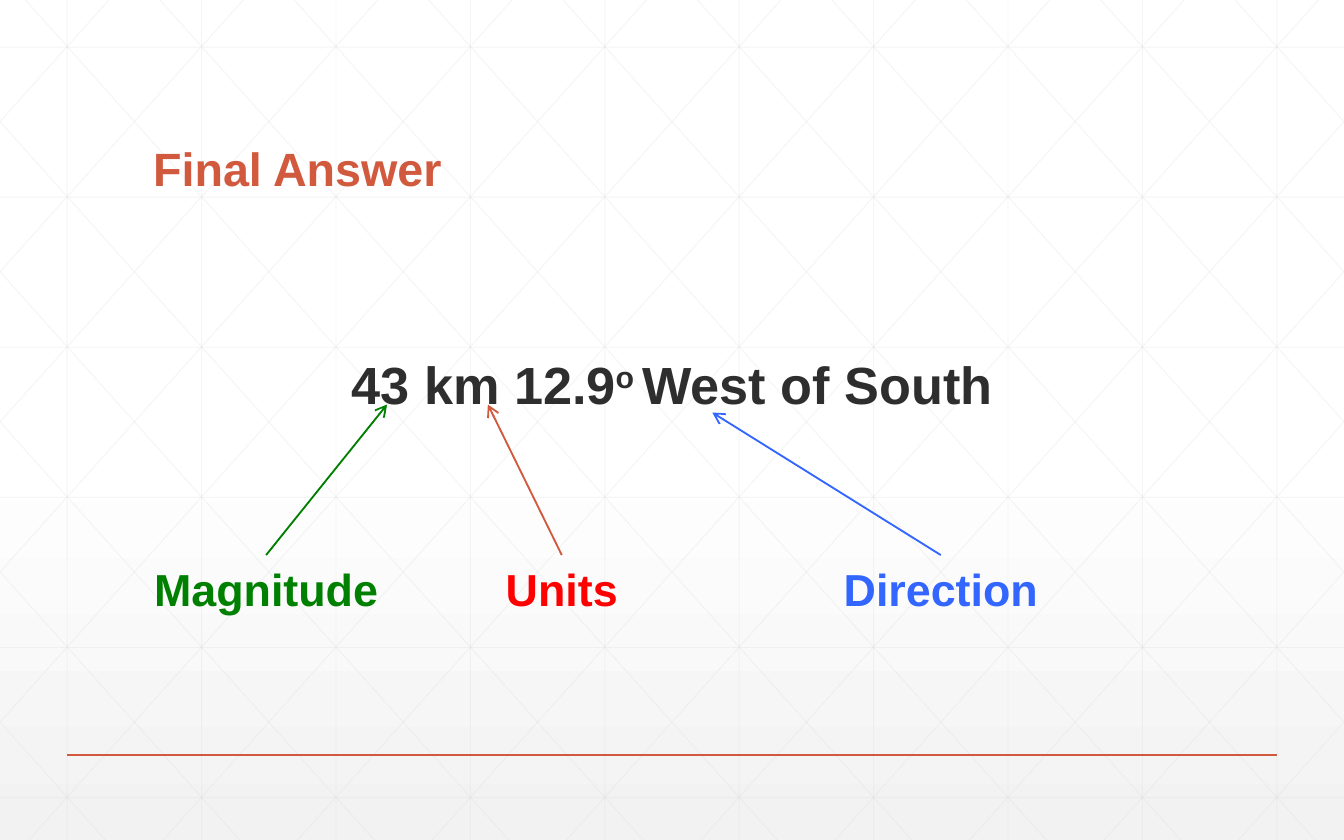
from copy import deepcopy

from lxml import etree
from pptx import Presentation
from pptx.dml.color import RGBColor
from pptx.enum.shapes import MSO_CONNECTOR
from pptx.enum.text import MSO_ANCHOR, PP_ALIGN
from pptx.oxml.ns import qn
from pptx.util import Inches, Pt

STRAIGHT = MSO_CONNECTOR.STRAIGHT
TOP, BOTTOM = MSO_ANCHOR.TOP, MSO_ANCHOR.BOTTOM
LEFT, CENTER = PP_ALIGN.LEFT, PP_ALIGN.CENTER

WIDTH, HEIGHT = 10, 6.25
FONT = "Arial"
RUST, DARK, GRID = "D15A3E", "2D2E2D", "D9D9D9"
GREEN, RED, BLUE = "008000", "FF0000", "3366FF"

# label, box, text colour, arrow colour, arrow tip
PARTS = [
    ("Magnitude", (0.93, 4.13, 2.1, 0.5), GREEN, GREEN, (2.88, 3.01)),
    ("Direction", (5.95, 4.13, 2.1, 0.5), BLUE, BLUE, (5.3, 3.07)),
    ("Units", (3.13, 4.13, 2.1, 0.5), RED, RUST, (3.63, 3.01)),
]


def rgb(code):
    return RGBColor.from_string(code)


def add_line(shapes, start, end, color, width=1, opacity=None, arrow=False):
    line = shapes.add_connector(STRAIGHT, *map(Inches, (*start, *end)))
    line.line.color.rgb = rgb(color)
    line.line.width = Pt(width)
    properties = line._element.spPr
    if opacity is not None:
        fill = properties.find(".//" + qn("a:srgbClr"))
        etree.SubElement(fill, qn("a:alpha")).set("val", str(opacity * 1000))
    if arrow:
        stroke = properties.find(qn("a:ln"))
        etree.SubElement(stroke, qn("a:tailEnd")).set("type", "arrow")
    etree.SubElement(properties, qn("a:effectLst"))


def add_run(para, text, size, color, baseline=0):
    span = para.add_run()
    span.text = text
    span.font.name = FONT
    span.font.size = Pt(size)
    span.font.bold = True
    span.font.color.rgb = rgb(color)
    if baseline:
        span._r.get_or_add_rPr().set("baseline", str(baseline * 1000))


def prepare_text(shape, anchor, align, inset_x, inset_y):
    """Set up the text frame and return its first paragraph."""
    frame = shape.text_frame
    frame.word_wrap = True
    frame.vertical_anchor = anchor
    frame.margin_left = frame.margin_right = Inches(inset_x)
    frame.margin_top = frame.margin_bottom = Inches(inset_y)
    para = frame.paragraphs[0]
    para.alignment = align
    return para


def paint_background(page):
    fill = page.background.fill
    fill.gradient()
    fill.gradient_angle = 270
    first = next(page._element.iter(qn("a:gs")))
    first.addnext(deepcopy(first))
    stops = zip(fill.gradient_stops, (0, 0.53, 1), ("FFFFFF", "FFFFFF", "F2F2F2"))
    for stop, position, color in stops:
        stop.position = position
        stop.color.rgb = rgb(color)


def add_grid(page, width, height):
    """Draw verticals, horizontals and mirrored diagonals clipped to the page."""
    row_gap = 1.117
    ends = [((0.5 + i, 0), (0.5 + i, height)) for i in range(10)]
    ends += [((0, 0.35 + row_gap * i), (width, 0.35 + row_gap * i)) for i in range(6)]
    for i in range(-5, 10):
        origin = 0.19 + i
        left = max(origin, 0)
        right = min(origin + height / row_gap, width)
        top, bottom = (row_gap * (x - origin) for x in (left, right))
        ends.append(((left, top), (right, bottom)))
        ends.append(((width - left, top), (width - right, bottom)))
    grid = page.shapes.add_group_shape()
    for start, end in ends:
        add_line(grid.shapes, start, end, GRID, 0.5, opacity=25)
    page.shapes._spTree.insert(2, grid._element)


def place_title(page, box, text):
    title = page.shapes.title
    title.left, title.top, title.width, title.height = map(Inches, box)
    para = prepare_text(title, BOTTOM, LEFT, 0.08, 0.04)
    para.line_spacing = 0.9
    add_run(para, text, 25, RUST)


def add_answer(page, box):
    answer = page.shapes.add_textbox(*map(Inches, box))
    para = prepare_text(answer, TOP, CENTER, 0.08, 0.04)
    add_run(para, "43 km 12.9", 28, DARK)
    add_run(para, "o ", 28, DARK, baseline=30)
    add_run(para, "West of South", 28, DARK)


def add_part(page, box, label, text_color, arrow_color, tip):
    """Label one part of the answer, with an arrow from the label to the part."""
    left, top, width, _ = box
    group = page.shapes.add_group_shape()
    caption = group.shapes.add_textbox(*map(Inches, box))
    para = prepare_text(caption, TOP, CENTER, 0.1, 0.05)
    add_run(para, label, 24, text_color)
    add_line(group.shapes, (left + width / 2, top), tip, arrow_color, arrow=True)


def main():
    deck = Presentation()
    deck.slide_width, deck.slide_height = Inches(WIDTH), Inches(HEIGHT)
    page = deck.slides.add_slide(deck.slide_layouts[5])
    paint_background(page)
    add_grid(page, WIDTH, HEIGHT)
    add_line(page.shapes, (0.5, 5.62), (9.5, 5.62), RUST)
    place_title(page, (1.06, 0.46, 7.88, 1.04), "Final Answer")
    add_answer(page, (1.06, 2.58, 7.88, 0.55))
    for label, box, text_color, arrow_color, tip in PARTS:
        add_part(page, box, label, text_color, arrow_color, tip)
    deck.save("out.pptx")


if __name__ == "__main__":
    main()
